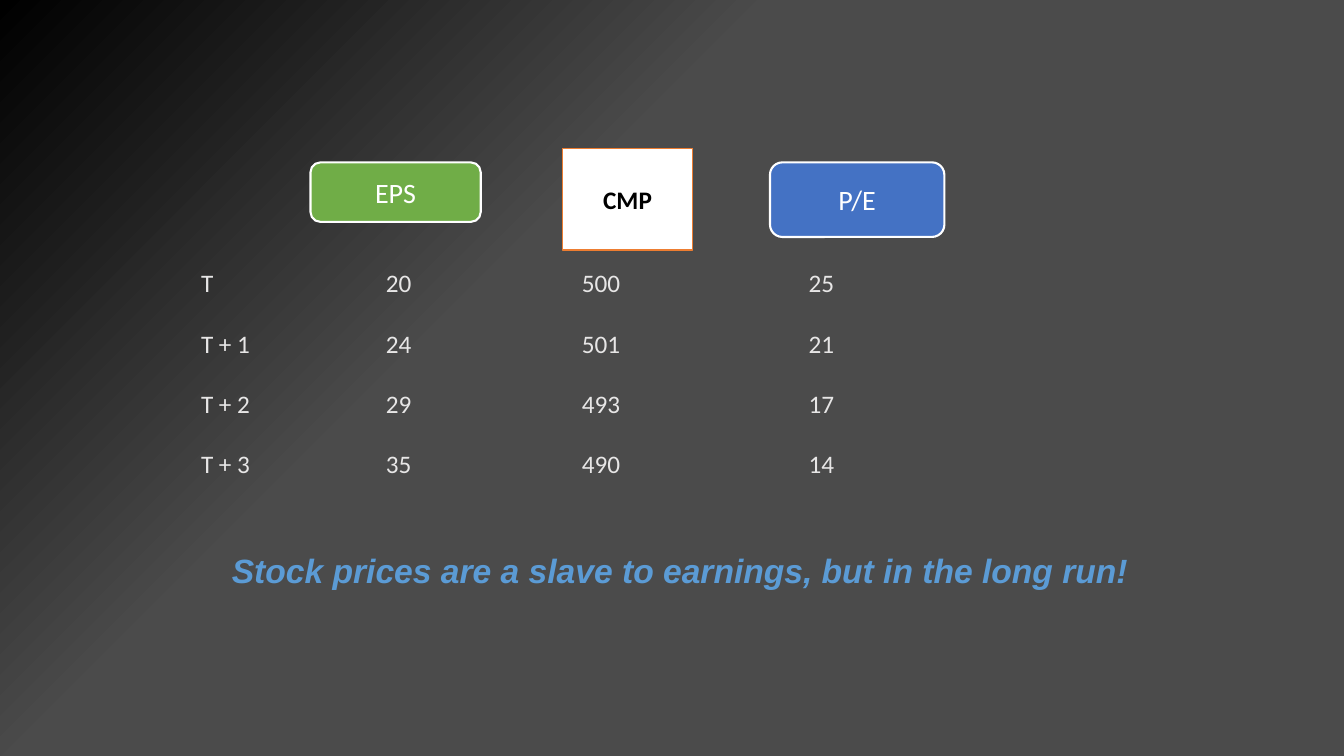
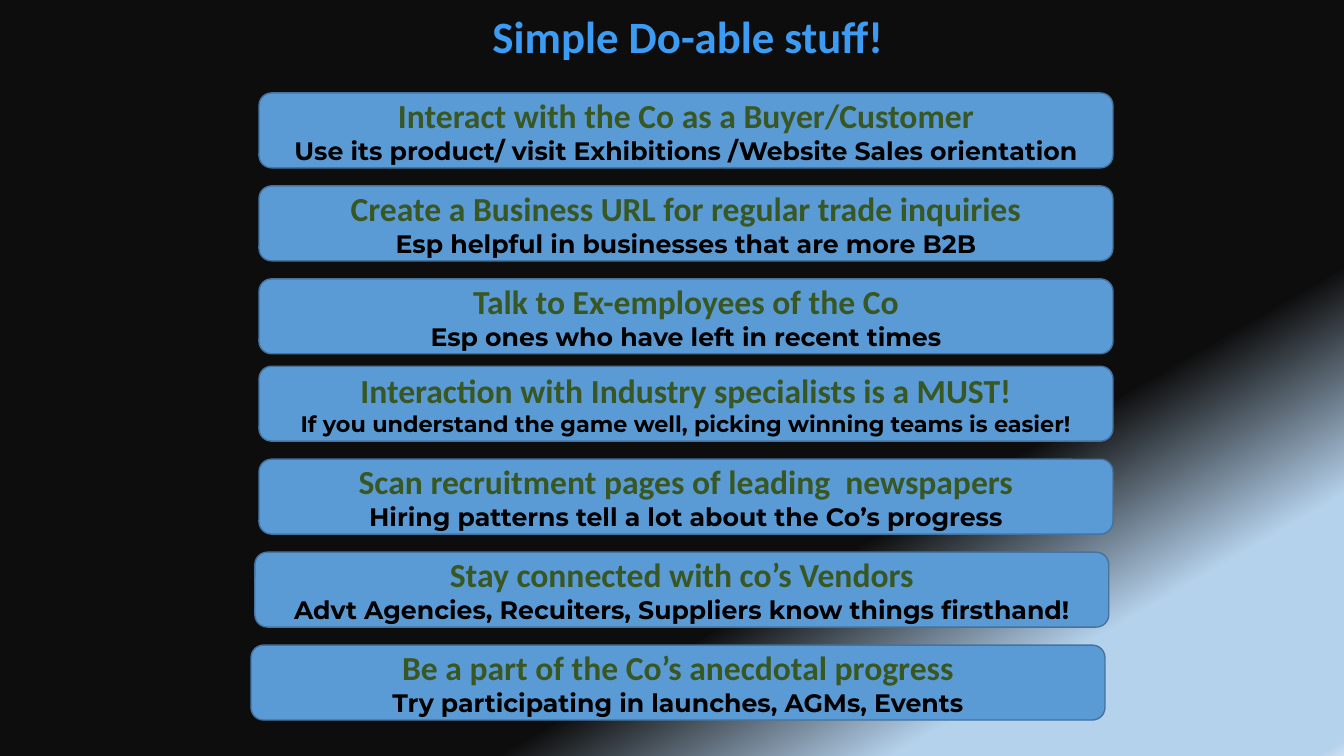
import pptx
import pptx.dml.color
import pptx.enum.shapes
import pptx.enum.text
import pptx.oxml
import pptx.oxml.ns
import pptx.util

Pt = pptx.util.Pt
SHAPE = pptx.enum.shapes.MSO_SHAPE
ALIGN = pptx.enum.text.PP_ALIGN
ANCHOR = pptx.enum.text.MSO_ANCHOR

WHITE, BLACK, SKY = "FFFFFF", "000000", "5B9BD5"
PALE_GREY, TITLE_BLUE = "E7E6E6", "3C9CF4"
CARD_EDGE, CARD_HEADING = "43739E", "385723"
NO_GRID_STYLE = "{2D5ABB26-0587-4C30-8999-92F81FD0307C}"

CORNER_GLOW = (
    [(63, "4B4B4B"), (100, BLACK)],
    '<a:path path="circle"><a:fillToRect l="100000" t="100000"/></a:path>'
    '<a:tileRect r="-100000" b="-100000"/>',
)
DIAGONAL_GLOW = (
    [(68, "0D0D0D"), (83, "B5D2EC"), (99, "B5D2EC"), (100, "CEE1F2")],
    '<a:lin ang="3600000" scaled="0"/>',
)

STATEMENT = "Stock prices are a slave to earnings, but in the long run!"
# label, preset, box, fill, line colour, line width, text size, text colour, bold
HEADERS = [
    ("EPS", SHAPE.ROUNDED_RECTANGLE, (221.8, 116, 121.6, 42.5), "70AD47", WHITE, 1.5, 20, WHITE, False),
    ("P/E", SHAPE.ROUNDED_RECTANGLE, (550, 116, 124.6, 53.3), "4472C4", WHITE, 1.5, 20, WHITE, False),
    ("CMP", SHAPE.RECTANGLE, (401.8, 106, 92.9, 72.7), WHITE, "ED7D31", 1, 18, BLACK, True),
]
VALUES = [
    ("T", "20", "500", "25"),
    ("T + 1", "24", "501", "21"),
    ("T + 2", "29", "493", "17"),
    ("T + 3", "35", "490", "14"),
]
COLUMN_WIDTHS = (132, 140, 162, 113)
ROW_HEIGHT = 43.1

TITLE = "Simple Do-able stuff!"
# heading, detail, detail size, left edge
CARDS = [
    ("Interact with the Co as a Buyer/Customer",
     "Use its product/ visit Exhibitions /Website Sales orientation", 18, 185),
    ("Create a Business URL for regular trade inquiries",
     "Esp helpful in businesses that are more B2B", 18, 185),
    ("Talk to Ex-employees of the Co",
     "Esp ones who have left in recent times", 18, 185),
    ("Interaction with Industry specialists is a MUST!",
     "If you understand the game well, picking winning teams is easier!", 16, 185),
    ("Scan recruitment pages of leading  newspapers",
     "Hiring patterns tell a lot about the Co’s progress", 18, 185),
    ("Stay connected with co’s Vendors",
     "Advt Agencies, Recuiters, Suppliers know things firsthand!", 18, 182),
    ("Be a part of the Co’s anecdotal progress",
     "Try participating in launches, AGMs, Events", 18, 179.3),
]
CARD_WIDTH, CARD_HEIGHT, CARD_PITCH = 610, 53.5, 66.4
LOWER_CARDS, LOWER_LIFT = 3, 4  # cards from this index on sit slightly higher


def rgb(color):
    return pptx.dml.color.RGBColor.from_string(color)


def set_background(slide, stops, direction):
    slide.background.fill.gradient()
    gradient = slide._element.find(".//" + pptx.oxml.ns.qn("a:gradFill"))
    stop_xml = "".join(
        f'<a:gs pos="{pos * 1000}"><a:srgbClr val="{color}"/></a:gs>' for pos, color in stops)
    new_gradient = pptx.oxml.parse_xml(
        f'<a:gradFill {pptx.oxml.ns.nsdecls("a")} rotWithShape="1">'
        f"<a:gsLst>{stop_xml}</a:gsLst>{direction}</a:gradFill>")
    gradient.getparent().replace(gradient, new_gradient)


def write(frame, lines, align=ALIGN.CENTER, anchor=ANCHOR.MIDDLE):
    """Fill a text frame; each line is (text, font, size, colour, bold)."""
    frame.word_wrap = True
    frame.vertical_anchor = anchor
    frame.text = "\n".join(line[0] for line in lines)
    for paragraph, (_, name, size, color, bold) in zip(frame.paragraphs, lines):
        paragraph.alignment = align
        font = paragraph.font
        font.name, font.size, font.bold = name, Pt(size), bold
        font.color.rgb = rgb(color)


def add_box(slide, preset, box, fill, edge, edge_width, lines):
    shape = slide.shapes.add_shape(preset, *map(Pt, box))
    shape.shadow.inherit = False
    shape.fill.solid()
    shape.fill.fore_color.rgb = rgb(fill)
    shape.line.color.rgb = rgb(edge)
    shape.line.width = Pt(edge_width)
    write(shape.text_frame, lines)


def add_slide(deck, background, title_box, title_line, **layout):
    slide = deck.slides.add_slide(deck.slide_layouts.get_by_name("Title Only"))
    set_background(slide, *background)
    title = slide.shapes.title
    title.left, title.top, title.width, title.height = map(Pt, title_box)
    write(title.text_frame, [title_line], **layout)
    title.text_frame.auto_size = pptx.enum.text.MSO_AUTO_SIZE.NONE
    return slide


def add_values(slide):
    frame = slide.shapes.add_table(
        len(VALUES), len(COLUMN_WIDTHS), Pt(136.4), Pt(181.5),
        Pt(sum(COLUMN_WIDTHS)), Pt(ROW_HEIGHT * len(VALUES)))
    table = frame.table
    table.first_row = table.horz_banding = False
    frame._element.find(".//" + pptx.oxml.ns.qn("a:tableStyleId")).text = NO_GRID_STYLE
    for column, width in zip(table.columns, COLUMN_WIDTHS):
        column.width = Pt(width)
    for row, values in zip(table.rows, VALUES):
        row.height = Pt(ROW_HEIGHT)
        for cell, value in zip(row.cells, values):
            cell.fill.background()
            cell.vertical_anchor = ANCHOR.MIDDLE
            paragraph = cell.text_frame.paragraphs[0]
            paragraph.text = value
            paragraph.font.name, paragraph.font.size = "Calibri", Pt(18)
            paragraph.font.color.rgb = rgb(PALE_GREY)


def build_earnings(deck):
    slide = add_slide(deck, CORNER_GLOW, (158.4, 375, 680.4, 45.4),
                      (STATEMENT, "Arial", 24, SKY, True),
                      align=ALIGN.LEFT, anchor=ANCHOR.TOP)
    statement = slide.shapes.title.text_frame.paragraphs[0]
    statement.font.italic = True
    statement.line_spacing = 1.5
    for label, preset, box, fill, edge, edge_width, size, color, bold in HEADERS:
        add_box(slide, preset, box, fill, edge, edge_width,
                [(label, "Calibri", size, color, bold)])
    add_values(slide)


def build_checklist(deck):
    slide = add_slide(deck, DIAGONAL_GLOW, (142.6, 0, 697.7, 50.4),
                      (TITLE, "Calibri", 32, TITLE_BLUE, True))
    for index, (heading, detail, detail_size, left) in enumerate(CARDS):
        top = CARD_PITCH * (index + 1) - (LOWER_LIFT if index >= LOWER_CARDS else 0)
        add_box(slide, SHAPE.ROUNDED_RECTANGLE, (left, top, CARD_WIDTH, CARD_HEIGHT),
                SKY, CARD_EDGE, 1,
                [(heading, "Calibri", 24, CARD_HEADING, True),
                 (detail, "Montserrat", detail_size, BLACK, True)])


def main():
    deck = pptx.Presentation()
    deck.slide_width, deck.slide_height = Pt(960), Pt(540)
    build_earnings(deck)
    build_checklist(deck)
    deck.save("out.pptx")


if __name__ == "__main__":
    main()
